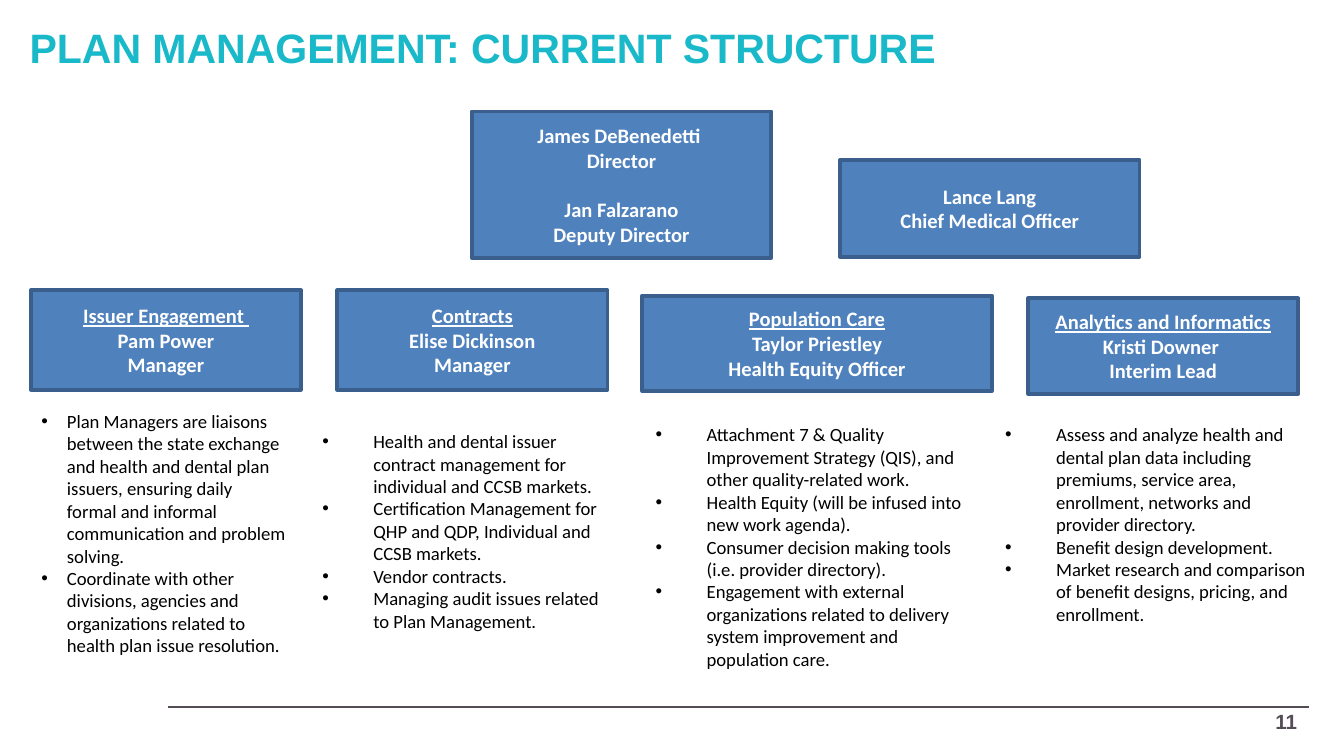
from dataclasses import dataclass

from lxml import etree
from pptx import Presentation
from pptx.dml.color import RGBColor
from pptx.enum.shapes import MSO_CONNECTOR, MSO_SHAPE
from pptx.enum.text import MSO_ANCHOR, MSO_AUTO_SIZE, PP_ALIGN
from pptx.oxml.ns import qn
from pptx.slide import Slide
from pptx.util import Inches, Pt

LEFT, CENTER, RIGHT = PP_ALIGN.LEFT, PP_ALIGN.CENTER, PP_ALIGN.RIGHT
TOP, MIDDLE = MSO_ANCHOR.TOP, MSO_ANCHOR.MIDDLE
TEAL = RGBColor(0x19, 0xB9, 0xCA)
BLUE = RGBColor(0x4F, 0x81, 0xBD)
DARK_BLUE = RGBColor(0x3A, 0x5F, 0x8C)
GRAY = RGBColor(0x55, 0x4D, 0x56)
WHITE = RGBColor(0xFF, 0xFF, 0xFF)
BLACK = RGBColor(0, 0, 0)


@dataclass(frozen=True)
class Frame:
    left: float
    top: float
    width: float
    height: float

    def lengths(self) -> tuple:
        return tuple(Inches(n) for n in (self.left, self.top, self.width, self.height))


@dataclass(frozen=True)
class Leaders:
    frame: Frame
    people: tuple[tuple[str, str], ...]


@dataclass(frozen=True)
class Team:
    card: Frame
    name: str
    lead: str
    role: str
    duties_frame: Frame
    duties: tuple[str, ...]
    indent: float = 0.38


LEADERS = (
    Leaders(Frame(3.51, 0.83, 2.23, 1.09),
            (("James DeBenedetti ", "Director"), ("Jan Falzarano", "Deputy Director"))),
    Leaders(Frame(6.25, 1.19, 2.23, 0.72), (("Lance Lang", "Chief Medical Officer"),)),
)

TEAMS = (
    Team(Frame(0.23, 2.16, 2.01, 0.74), "Issuer Engagement ", "Pam Power", "Manager",
         Frame(0.21, 3, 2.01, 1.95), (
             "Plan Managers are liaisons between the state exchange and health and dental "
             "plan issuers, ensuring daily formal and informal communication and problem solving.",
             "Coordinate with other divisions, agencies and organizations related to "
             "health plan issue resolution."), indent=0.19),
    Team(Frame(2.51, 2.16, 2.01, 0.74), "Contracts", "Elise Dickinson", "Manager",
         Frame(2.3, 3.15, 2.31, 1.78), (
             "Health and dental issuer contract management for individual and CCSB markets.",
             "Certification Management for QHP and QDP, Individual and CCSB markets.",
             "Vendor contracts.",
             "Managing audit issues related to Plan Management.")),
    Team(Frame(4.78, 2.2, 2.6, 0.71), "Population Care", "Taylor Priestley",
         "Health Equity Officer", Frame(4.78, 3.1, 2.51, 2.12), (
             "Attachment 7 & Quality Improvement Strategy (QIS), and other quality-related work.",
             "Health Equity (will be infused into new work agenda).",
             "Consumer decision making tools (i.e. provider directory).",
             "Engagement with external organizations related to delivery system "
             "improvement and population care.")),
    Team(Frame(7.65, 2.22, 2.01, 0.71), "Analytics and Informatics", "Kristi Downer ",
         "Interim Lead", Frame(7.38, 3.1, 2.48, 1.62), (
             "Assess and analyze health and dental plan data including premiums, service "
             "area, enrollment, networks and provider directory.",
             "Benefit design development.",
             "Market research and comparison of benefit designs, pricing, and enrollment.")),
)


def add_line(text_frame, index: int, text: str, size: float, color: RGBColor,
             align=LEFT, font: str = "Calibri", bold: bool = False, underline: bool = False):
    """Write one paragraph, reusing the frame's first one for index 0."""
    paragraph = text_frame.add_paragraph() if index else text_frame.paragraphs[0]
    paragraph.alignment = align
    run = paragraph.add_run()
    run.text = text
    run.font.name = font
    run.font.size = Pt(size)
    run.font.bold = bold
    run.font.underline = underline
    run.font.color.rgb = color
    return paragraph


def add_card(slide: Slide, frame: Frame):
    """Draw a blue box and return its text frame."""
    card = slide.shapes.add_shape(MSO_SHAPE.RECTANGLE, *frame.lengths())
    card.shadow.inherit = False
    card.fill.solid()
    card.fill.fore_color.rgb = BLUE
    card.line.color.rgb = DARK_BLUE
    card.line.width = Pt(2)
    text_frame = card.text_frame
    text_frame.word_wrap = True
    text_frame.vertical_anchor = MIDDLE
    return text_frame


def add_leaders(slide: Slide, leaders: Leaders) -> None:
    text_frame = add_card(slide, leaders.frame)
    for number, (name, role) in enumerate(leaders.people):
        paragraph = add_line(text_frame, number, name, 11, WHITE, CENTER, bold=True)
        if number:
            paragraph.space_before = Pt(13.4)
        add_line(text_frame, number + 1, role, 11, WHITE, CENTER, bold=True)


def add_team(slide: Slide, team: Team) -> None:
    text_frame = add_card(slide, team.card)
    for index, text in enumerate((team.name, team.lead, team.role)):
        add_line(text_frame, index, text, 11, WHITE, CENTER, bold=True, underline=index == 0)

    # Bulleted duties under the card
    text_frame = slide.shapes.add_textbox(*team.duties_frame.lengths()).text_frame
    text_frame.word_wrap = True
    text_frame.auto_size = MSO_AUTO_SIZE.SHAPE_TO_FIT_TEXT
    for index, duty in enumerate(team.duties):
        paragraph = add_line(text_frame, index, duty, 10, BLACK)
        properties = paragraph._p.get_or_add_pPr()
        properties.set("marL", str(Inches(team.indent)))
        properties.set("indent", str(-Inches(team.indent)))
        etree.SubElement(properties, qn("a:buFont")).set("typeface", "Arial")
        etree.SubElement(properties, qn("a:buChar")).set("char", "•")


def add_title(slide: Slide, text: str) -> None:
    title = slide.shapes.title
    title.left, title.top, title.width, title.height = Frame(0.12, 0.12, 9.5, 0.54).lengths()
    text_frame = title.text_frame
    text_frame.auto_size = MSO_AUTO_SIZE.NONE
    text_frame.vertical_anchor = TOP
    add_line(text_frame, 0, text, 22, TEAL, font="Arial", bold=True)


def add_footer(slide: Slide, number: str) -> None:
    rule = slide.shapes.add_connector(
        MSO_CONNECTOR.STRAIGHT, Inches(1.25), Inches(5.26), Inches(9.74), Inches(5.26))
    rule.line.color.rgb = GRAY
    rule.line.width = Pt(0.75)
    etree.SubElement(rule._element.spPr, qn("a:effectLst"))
    text_frame = slide.shapes.add_textbox(*Frame(8.95, 5.22, 0.8, 0.3).lengths()).text_frame
    text_frame.word_wrap = True
    text_frame.vertical_anchor = MIDDLE
    add_line(text_frame, 0, number, 11, GRAY, RIGHT, font="Arial", bold=True)


def main() -> None:
    # Widescreen slide, 16:9
    presentation = Presentation()
    presentation.slide_width = Inches(10)
    presentation.slide_height = Inches(10 * 9 / 16)
    slide = presentation.slides.add_slide(presentation.slide_layouts[5])

    add_footer(slide, "11")
    add_title(slide, "PLAN MANAGEMENT: CURRENT STRUCTURE")
    for leaders in LEADERS:
        add_leaders(slide, leaders)
    for team in TEAMS:
        add_team(slide, team)

    presentation.save("out.pptx")


if __name__ == "__main__":
    main()
